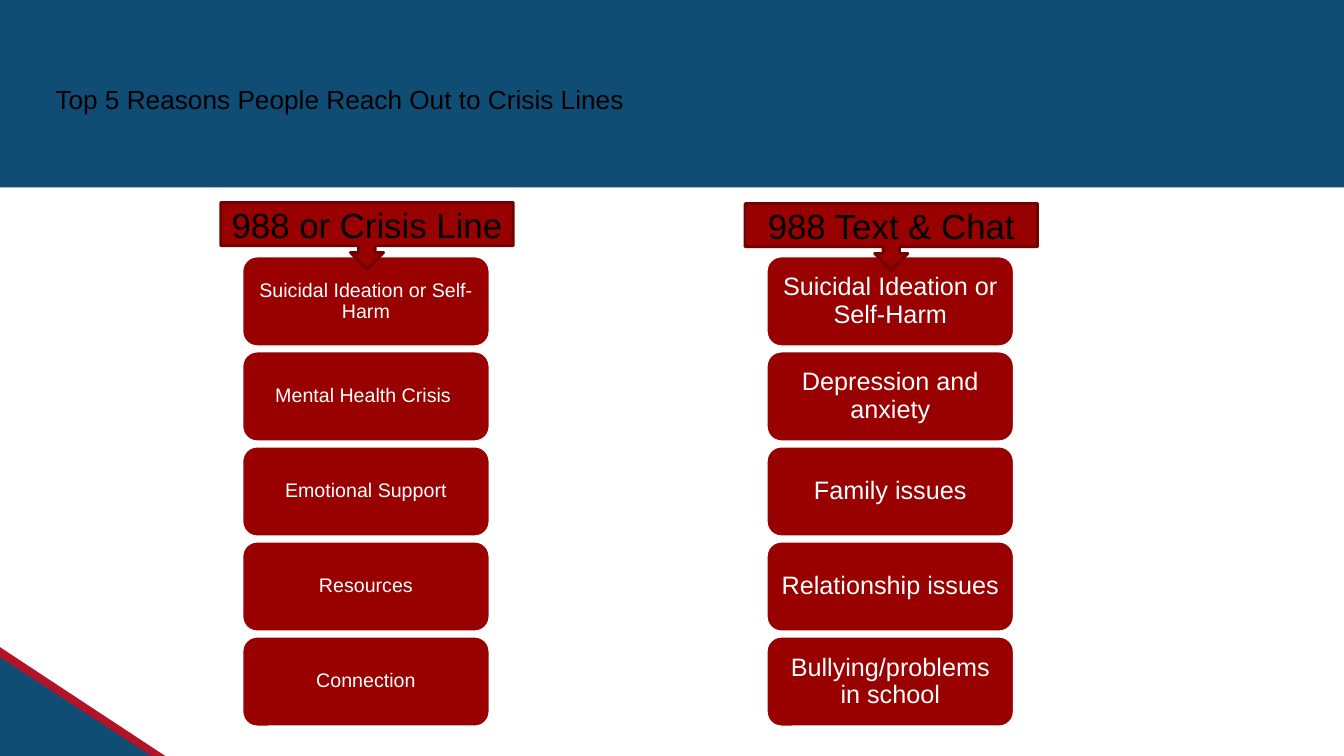
from dataclasses import dataclass

from pptx import Presentation
from pptx.dml.color import RGBColor
from pptx.enum.shapes import MSO_SHAPE
from pptx.enum.text import MSO_ANCHOR, PP_ALIGN
from pptx.util import Inches, Pt

RECT = MSO_SHAPE.RECTANGLE
TRIANGLE = MSO_SHAPE.RIGHT_TRIANGLE
CARD = MSO_SHAPE.ROUNDED_RECTANGLE
CALLOUT = MSO_SHAPE.DOWN_ARROW_CALLOUT
TOP, MIDDLE = MSO_ANCHOR.TOP, MSO_ANCHOR.MIDDLE
LEFT, CENTER = PP_ALIGN.LEFT, PP_ALIGN.CENTER


@dataclass(frozen=True)
class Theme:
    """Colours, type sizes and font of the slide."""
    font: str = "Arial"
    navy: str = "104D75"
    crimson: str = "B31327"
    red: str = "990000"
    dark_red: str = "710000"
    white: str = "FFFFFF"
    black: str = "000000"
    title_size: float = 18.7
    header_size: float = 24.9
    line_width: float = 2


THEME = Theme()
CARD_TOP, CARD_PITCH = 2.54, 0.943
CARD_WIDTH, CARD_HEIGHT = 2.46, 0.9
HEADER_WIDTH, HEADER_HEIGHT, HEADER_OVERHANG = 2.9, 0.66, 0.21

COLUMNS = [
    (2.4, 2.01, 14, (0.06, 0.03), "988 or Crisis Line",
     ["Suicidal Ideation or Self-Harm", "Mental Health Crisis ",
      "Emotional Support", "Resources", "Connection"]),
    (7.6, 2.02, 18, (0.07, 0.04), "988 Text & Chat",
     ["Suicidal Ideation or Self-Harm", "Depression and anxiety",
      "Family issues", "Relationship issues", "Bullying/problems in school"]),
]


def write(shape, text, size, color, margins, anchor=MIDDLE, align=CENTER, spacing=1.0):
    """Put one formatted paragraph into a shape."""
    frame = shape.text_frame
    across, down = (Inches(margin) for margin in margins)
    frame_format = {"word_wrap": True, "vertical_anchor": anchor,
                    "margin_left": across, "margin_right": across,
                    "margin_top": down, "margin_bottom": down}
    for name, value in frame_format.items():
        setattr(frame, name, value)
    frame.text = text
    paragraph = frame.paragraphs[0]
    paragraph.alignment = align
    paragraph.line_spacing = spacing
    font = paragraph.runs[0].font
    for name, value in {"name": THEME.font, "size": Pt(size), "bold": False}.items():
        setattr(font, name, value)
    font.color.rgb = RGBColor.from_string(color)


def add_block(slide, kind, place, fill, line=None):
    """Add a filled preset shape with an optional outline."""
    block = slide.shapes.add_shape(kind, *map(Inches, place))
    block.shadow.inherit = False
    block.fill.solid()
    block.fill.fore_color.rgb = RGBColor.from_string(fill)
    if line:
        block.line.color.rgb = RGBColor.from_string(line)
        block.line.width = Pt(THEME.line_width)
    else:
        block.line.fill.background()
    return block


def add_backdrop(slide):
    """Add the title band and the corner triangles."""
    add_block(slide, RECT, (0, 0, 13.33, 1.86), THEME.navy)
    add_block(slide, TRIANGLE, (0, 6.42, 1.64, 1.08), THEME.crimson)
    add_block(slide, TRIANGLE, (0, 6.52, 1.5, 0.98), THEME.navy)


def add_title(slide, text):
    """Format the title placeholder and bring it above the band."""
    title = slide.shapes.title
    place = {"left": 0.45, "top": 0.73, "width": 12.42, "height": 0.91}
    for name, value in place.items():
        setattr(title, name, Inches(value))
    write(title, text, THEME.title_size, THEME.black, (0.1, 0.1), TOP, LEFT)
    slide.shapes[-1].element.addnext(title.element)


def add_column(slide, left, header_top, size, margins, heading, reasons):
    """Add a stack of reason cards under an arrow header."""
    for row, reason in enumerate(reasons):
        place = (left, CARD_TOP + row * CARD_PITCH, CARD_WIDTH, CARD_HEIGHT)
        card = add_block(slide, CARD, place, THEME.red, THEME.white)
        write(card, reason, size, THEME.white, margins, spacing=0.9)
    place = (left - HEADER_OVERHANG, header_top, HEADER_WIDTH, HEADER_HEIGHT)
    header = add_block(slide, CALLOUT, place, THEME.red, THEME.dark_red)
    write(header, heading, THEME.header_size, THEME.black, (0.05, 0.05))


def main():
    """Build and save the slide."""
    deck = Presentation()
    deck.slide_width, deck.slide_height = Inches(13.33), Inches(7.5)
    slide = deck.slides.add_slide(deck.slide_layouts.get_by_name("Title Only"))
    add_backdrop(slide)
    add_title(slide, "Top 5 Reasons People Reach Out to Crisis Lines")
    for column in COLUMNS:
        add_column(slide, *column)
    deck.save("out.pptx")


if __name__ == "__main__":
    main()
